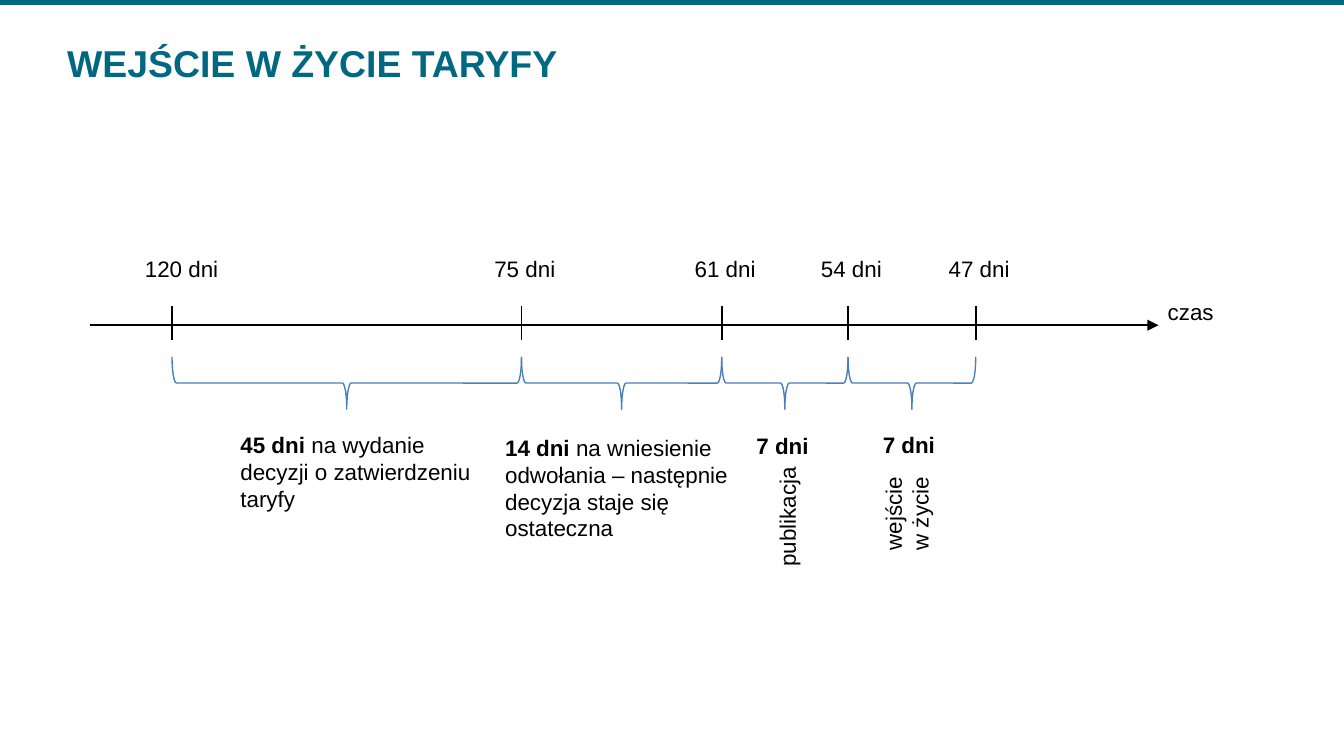
from lxml import etree
from pptx import Presentation
from pptx.dml.color import RGBColor
from pptx.enum import shapes, text
from pptx.oxml.ns import qn
from pptx.util import Inches, Pt

COLOURS = {"teal": "006881", "blue": "4B7EBC", "black": "000000", "white": "FFFFFF"}
FONT = "Arial"
SLIDE_WIDTH = Inches(10)
SLIDE_HEIGHT = SLIDE_WIDTH * 9 // 16

TITLE = "WEJŚCIE W ŻYCIE TARYFY"
AXIS_LABEL = "czas"
MILESTONES = [("120 dni", 1.28), ("75 dni", 3.88), ("61 dni", 5.37),
              ("54 dni", 6.31), ("47 dni", 7.26)]
# Box (left, top, width, height), rotation, runs as (text, bold)
ROTATED_NOTES = [
    ((5.53, 3.5, 0.99, 0.64), 270, [("publikacja", False)]),
    ((6.38, 3.44, 0.87, 0.64), 270, [("wejście w życie", False)]),
]
PERIOD_NOTES = [
    ((1.69, 3.16, 1.92, 0.64), 0,
     [("45 dni ", True), ("na wydanie decyzji o zatwierdzeniu taryfy", False)]),
    ((3.66, 3.18, 1.91, 0.64), 0,
     [("14 dni ", True),
      ("na wniesienie odwołania – następnie decyzja staje się ostateczna", False)]),
    ((5.53, 3.17, 0.66, 0.23), 0, [("7 dni", True)]),
    ((6.47, 3.16, 0.66, 0.24), 0, [("7 dni", True)]),
]

AXIS_Y, AXIS_START, AXIS_END = 2.42, 0.67, 8.62
TICK_TOP, TICK_BOTTOM = 2.28, 2.53
LABEL_OFFSET, LABEL_TOP, LABEL_SIZE = 0.3, 1.85, (0.8, 0.25)
BRACE_DEPTH, BRACE_CENTRE_Y = 0.39, 2.85


def colour(name):
    return RGBColor.from_string(COLOURS[name])


def add_run(paragraph, words, size, colour_name, bold=False):
    run = paragraph.add_run()
    run.text = words
    run.font.name = FONT
    run.font.size = Pt(size)
    run.font.bold = bold
    run.font.color.rgb = colour(colour_name)


def add_label(slide, box, rotation, runs):
    label = slide.shapes.add_shape(shapes.MSO_SHAPE.RECTANGLE, *map(Inches, box))
    label.rotation = rotation
    label.shadow.inherit = False
    label.fill.solid()
    label.fill.fore_color.rgb = colour("white")
    label.line.fill.background()
    label.text_frame.word_wrap = True
    label.text_frame.vertical_anchor = text.MSO_ANCHOR.TOP
    paragraph = label.text_frame.paragraphs[0]
    paragraph.alignment = text.PP_ALIGN.LEFT
    for words, bold in runs:
        add_run(paragraph, words, 12, "black", bold)


def add_line(slide, x1, y1, x2, y2, arrow=False):
    line = slide.shapes.add_connector(
        shapes.MSO_CONNECTOR.STRAIGHT, *map(Inches, (x1, y1, x2, y2)))
    line.line.color.rgb = colour("black")
    line.line.width = Pt(1)
    if arrow:
        etree.SubElement(line.line._get_or_add_ln(), qn("a:tailEnd"), type="triangle")
    etree.SubElement(line._element.spPr, qn("a:effectLst"))


def add_brace(slide, start, end):
    """Span start to end with a brace pointing down: a right brace turned by 90 degrees."""
    span = end - start
    left = (start + end - BRACE_DEPTH) / 2
    brace = slide.shapes.add_shape(
        shapes.MSO_SHAPE.RIGHT_BRACE, Inches(left), Inches(BRACE_CENTRE_Y - span / 2),
        Inches(BRACE_DEPTH), Inches(span))
    brace.rotation = 90
    brace.shadow.inherit = False
    brace.fill.background()
    brace.line.color.rgb = colour("blue")
    brace.line.width = Pt(0.75)


def add_top_bar(slide):
    bar = slide.shapes.add_shape(
        shapes.MSO_SHAPE.RECTANGLE, 0, 0, SLIDE_WIDTH, Inches(0.02))
    bar.shadow.inherit = False
    bar.fill.solid()
    bar.fill.fore_color.rgb = colour("teal")
    bar.line.color.rgb = colour("teal")
    bar.line.width = Pt(2)


def format_title(title):
    title.left, title.top, title.width, title.height = map(Inches, (0.5, 0.3, 8.91, 0.7))
    frame = title.text_frame
    frame.margin_left = frame.margin_right = frame.margin_top = frame.margin_bottom = 0
    frame.vertical_anchor = text.MSO_ANCHOR.TOP
    frame.auto_size = text.MSO_AUTO_SIZE.NONE
    frame.paragraphs[0].alignment = text.PP_ALIGN.LEFT
    add_run(frame.paragraphs[0], TITLE, 20, "teal", True)


def main():
    presentation = Presentation()
    presentation.slide_width, presentation.slide_height = SLIDE_WIDTH, SLIDE_HEIGHT
    slide = presentation.slides.add_slide(presentation.slide_layouts[5])

    add_top_bar(slide)
    format_title(slide.shapes.title)
    for note in ROTATED_NOTES:
        add_label(slide, *note)

    add_label(slide, (8.59, 2.17, *LABEL_SIZE), 0, [(AXIS_LABEL, False)])
    add_line(slide, AXIS_START, AXIS_Y, AXIS_END, AXIS_Y, arrow=True)
    for words, x in MILESTONES:
        add_line(slide, x, TICK_TOP, x, TICK_BOTTOM)
        add_label(slide, (x - LABEL_OFFSET, LABEL_TOP, *LABEL_SIZE), 0, [(words, False)])

    for (_, start), (_, end) in zip(MILESTONES, MILESTONES[1:]):
        add_brace(slide, start, end)
    for note in PERIOD_NOTES:
        add_label(slide, *note)

    presentation.save("out.pptx")


if __name__ == "__main__":
    main()
